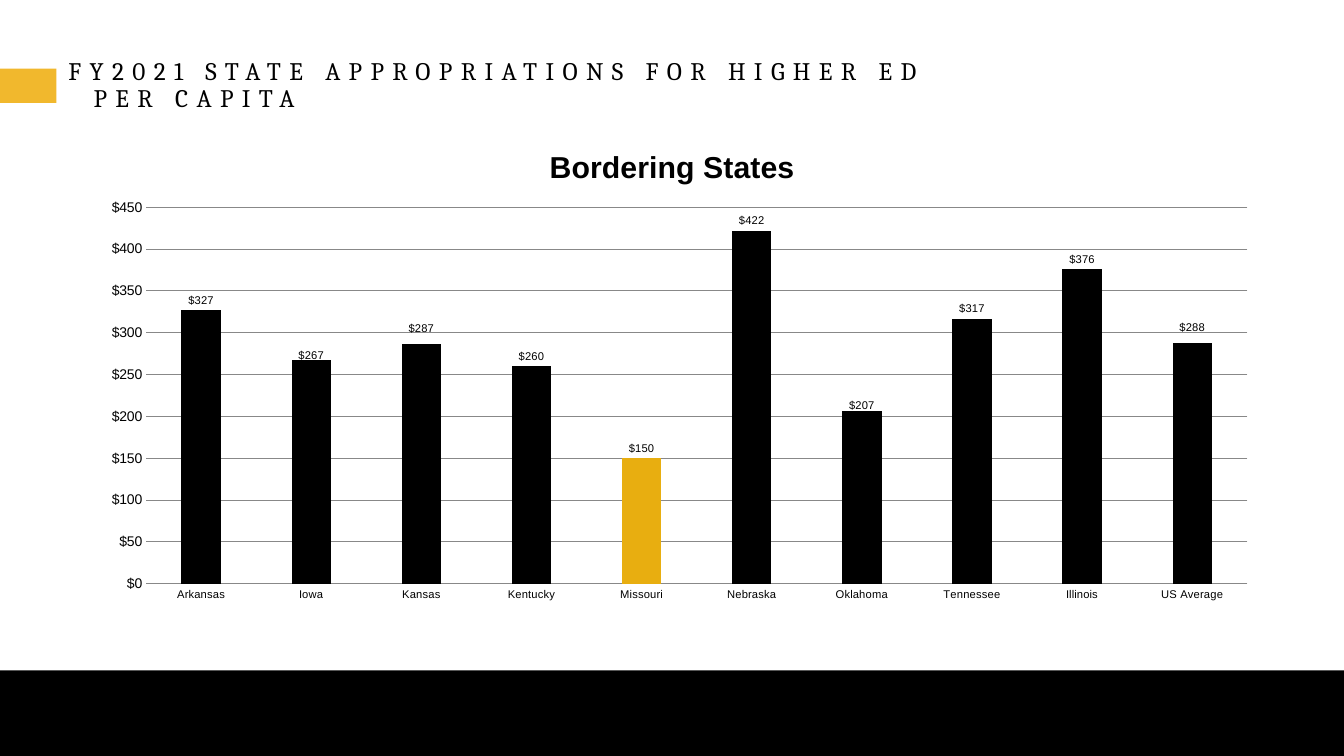
import lxml.etree
import pptx
import pptx.chart.data
import pptx.dml.color
import pptx.enum.chart
import pptx.enum.shapes
import pptx.enum.text
import pptx.oxml.ns
import pptx.util

Pt = pptx.util.Pt
RGBColor = pptx.dml.color.RGBColor
qn = pptx.oxml.ns.qn

BLACK = RGBColor(0x00, 0x00, 0x00)
WHITE = RGBColor(0xFF, 0xFF, 0xFF)
BANNER_GOLD = RGBColor(0xF1, 0xB8, 0x2D)
MISSOURI_GOLD = RGBColor(0xE8, 0xAE, 0x10)
GRID_GRAY = RGBColor(0x88, 0x88, 0x88)

APPROPRIATIONS = {
    "Arkansas": 327, "Iowa": 267, "Kansas": 287, "Kentucky": 260, "Missouri": 150,
    "Nebraska": 422, "Oklahoma": 207, "Tennessee": 317, "Illinois": 376, "US Average": 288,
}
LABEL_SHIFTS = {"Iowa": 0.01, "Kansas": -0.01, "Oklahoma": 0.01, "US Average": -0.01}


class SlideBuilder:
    """Hold the style and the current slide, and add each kind of element."""

    heading_font = "Cambria"
    chart_font = "Arial"
    dollars = '"$"#,##0'

    def __init__(self, slide):
        self.slide = slide
        slide.background.fill.solid()
        slide.background.fill.fore_color.rgb = WHITE

    def add_block(self, left, top, width, height, color):
        shape = self.slide.shapes.add_shape(
            pptx.enum.shapes.MSO_SHAPE.RECTANGLE, Pt(left), Pt(top), Pt(width), Pt(height))
        shape.shadow.inherit = False
        shape.fill.solid()
        shape.fill.fore_color.rgb = color
        shape.line.fill.background()

    def add_heading(self, text, left, top, width, height):
        box = self.slide.shapes.add_textbox(Pt(left), Pt(top), Pt(width), Pt(height))
        frame = box.text_frame
        frame.word_wrap = True
        frame.vertical_anchor = pptx.enum.text.MSO_ANCHOR.MIDDLE
        paragraph = frame.paragraphs[0]
        paragraph.text = text
        paragraph.line_spacing = 0.9
        properties = paragraph._p.get_or_add_pPr()
        properties.set("marL", str(Pt(18)))
        properties.set("indent", str(Pt(-18)))
        self.style_font(paragraph.font, 18, self.heading_font)
        for run in paragraph.runs:
            run._r.get_or_add_rPr().set("spc", "600")

    def style_font(self, font, size, name):
        font.size = Pt(size)
        font.name = name
        font.color.rgb = BLACK

    def set_layout(self, parent, position, **values):
        for old in parent.findall(qn("c:layout")):
            parent.remove(old)
        layout = lxml.etree.SubElement(parent, qn("c:layout"))
        manual = lxml.etree.SubElement(layout, qn("c:manualLayout"))
        for tag, value in values.items():
            lxml.etree.SubElement(manual, qn(f"c:{tag}")).set("val", str(value))
        parent.insert(position, layout)

    def add_column_chart(self, title, values, highlight, label_shifts, left, top, width, height):
        data = pptx.chart.data.CategoryChartData(number_format=self.dollars)
        data.categories = list(values)
        data.add_series(title, list(values.values()))
        chart = self.slide.shapes.add_chart(
            pptx.enum.chart.XL_CHART_TYPE.COLUMN_CLUSTERED,
            Pt(left), Pt(top), Pt(width), Pt(height), data).chart
        self.style_font(chart.font, 18, self.chart_font)
        chart.has_legend = False
        chart.has_title = True
        paragraph = chart.chart_title.text_frame.paragraphs[0]
        paragraph.text = title
        self.style_font(paragraph.font, 21.6, self.chart_font)
        paragraph.font.bold = True
        plot_area = chart._chartSpace.find(qn("c:chart")).find(qn("c:plotArea"))
        self.set_layout(plot_area, 0, layoutTarget="inner",
                        xMode="edge", yMode="edge", x=0.07, y=0.16, w=0.9, h=0.75)
        self.style_axes(chart)
        self.style_columns(chart.plots[0], list(values), highlight, label_shifts)

    def style_axes(self, chart):
        for axis, size in ((chart.category_axis, 8), (chart.value_axis, 10)):
            axis.major_tick_mark = pptx.enum.chart.XL_TICK_MARK.NONE
            axis.minor_tick_mark = pptx.enum.chart.XL_TICK_MARK.NONE
            self.style_font(axis.tick_labels.font, size, self.chart_font)
        value_axis = chart.value_axis
        value_axis.minimum_scale = 0
        value_axis.maximum_scale = 450
        value_axis.major_unit = 50
        value_axis.tick_labels.number_format = self.dollars
        value_axis.tick_labels.number_format_is_linked = False
        value_axis.format.line.fill.background()
        for line in (chart.category_axis.format.line, value_axis.major_gridlines.format.line):
            line.color.rgb = GRID_GRAY
            line.width = Pt(0.75)

    def style_columns(self, plot, names, highlight, label_shifts):
        plot.gap_width = 180
        plot.overlap = 75
        plot.vary_by_categories = False
        series = plot.series[0]
        series.invert_if_negative = False
        outside = pptx.enum.chart.XL_LABEL_POSITION.OUTSIDE_END
        labels = series.data_labels
        labels.show_value = True
        labels.position = outside
        labels.number_format = self.dollars
        labels.number_format_is_linked = False
        self.style_font(labels.font, 8, self.chart_font)
        for fill, color in ((series.format.fill, BLACK),
                            (series.points[names.index(highlight)].format.fill, MISSOURI_GOLD)):
            fill.solid()
            fill.fore_color.rgb = color
        for name, shift in label_shifts.items():
            label = series.points[names.index(name)].data_label
            self.style_font(label.font, 8, self.chart_font)
            label.position = outside
            self.set_layout(label._get_or_add_dLbl(), 1, x=0, y=shift)


def main():
    presentation = pptx.Presentation()
    presentation.slide_width = Pt(960)
    presentation.slide_height = Pt(540)
    builder = SlideBuilder(presentation.slides.add_slide(presentation.slide_layouts[6]))
    builder.add_block(0, 478.8, 960, 61.2, BLACK)
    builder.add_block(0, 49, 40.3, 24.5, BANNER_GOLD)
    builder.add_heading("FY2021 STATE APPROPRIATIONS FOR HIGHER ED\vPER CAPITA", 41.8, 49, 874, 24.5)
    builder.add_column_chart("Bordering States", APPROPRIATIONS, "Missouri", LABEL_SHIFTS,
                             43.2, 90.7, 874, 358.6)
    presentation.save("out.pptx")


if __name__ == "__main__":
    main()
